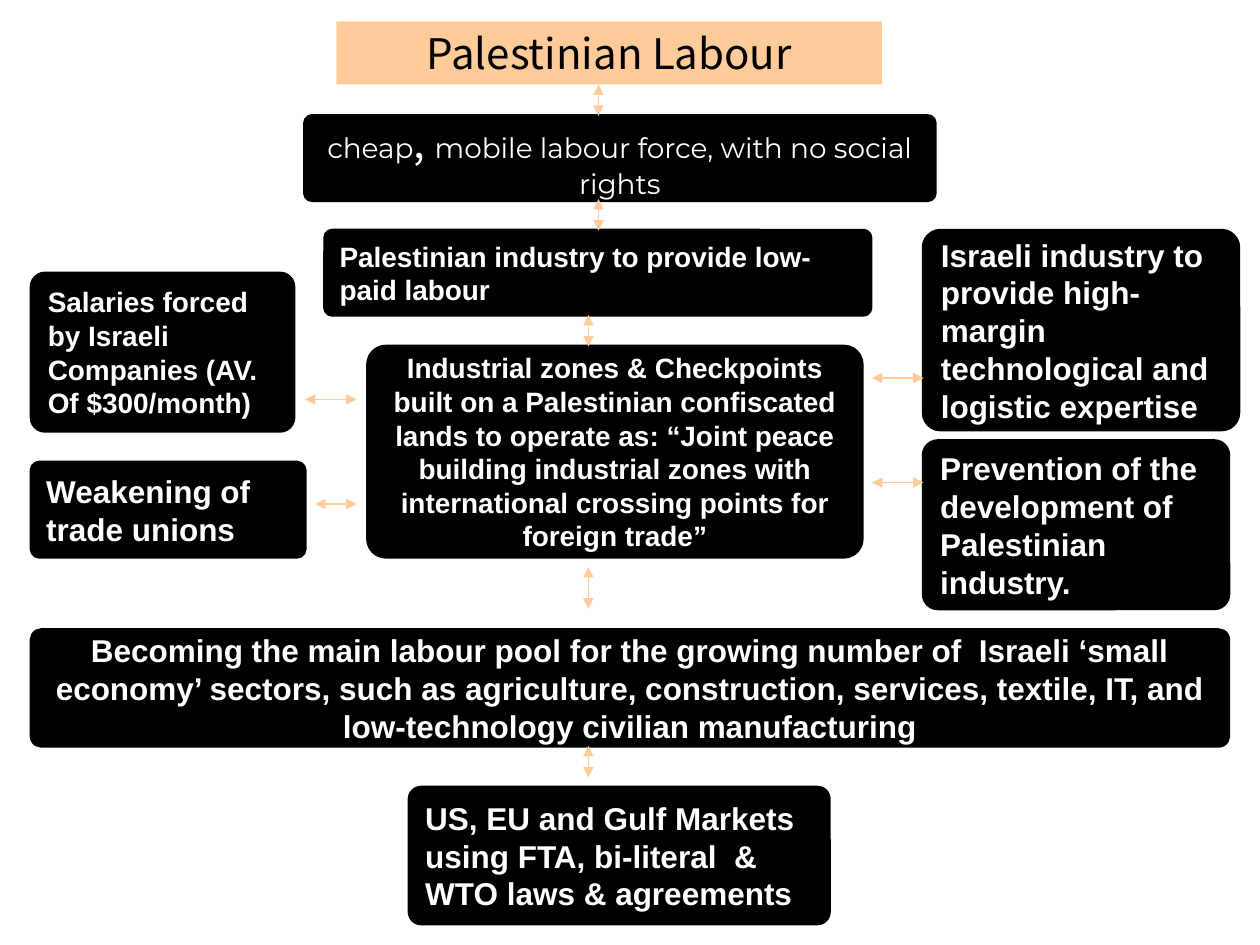
from dataclasses import dataclass
from typing import NamedTuple

from lxml.etree import SubElement
from pptx import Presentation
from pptx.dml.color import RGBColor
from pptx.enum.shapes import MSO_CONNECTOR, MSO_SHAPE
from pptx.enum.text import MSO_ANCHOR, MSO_AUTO_SIZE, PP_ALIGN
from pptx.oxml.ns import qn
from pptx.slide import Slide
from pptx.util import Inches, Pt

BLACK = RGBColor(0x00, 0x00, 0x00)
WHITE = RGBColor(0xFF, 0xFF, 0xFF)
PEACH = RGBColor(0xFF, 0xCC, 0x99)
TITLE_FONT = "Noto Sans CJK JP"


@dataclass
class Box:
    left: float
    top: float
    width: float
    height: float
    text: str
    size: int = 18
    align: PP_ALIGN = PP_ALIGN.LEFT
    font: str = "Arial"
    bold: bool = True


class Arrow(NamedTuple):
    x1: float
    y1: float
    x2: float
    y2: float


LABOUR_FORCE = Box(2.42, 0.92, 5, 0.67, "cheap", 16, PP_ALIGN.CENTER, "Montserrat", False)

BOXES = [
    # Right side
    Box(7.33, 1.83, 2.5, 1.58,
        "Israeli industry to provide high-margin technological and logistic expertise"),
    Box(7.33, 3.5, 2.42, 1.33, "Prevention of the development of Palestinian industry."),
    # Left side
    Box(0.25, 2.17, 2.08, 1.25,
        "Salaries forced by Israeli Companies (AV. Of $300/month)", 16),
    Box(0.25, 3.67, 2.17, 0.75, "Weakening of trade unions"),
    # Central column
    Box(2.58, 1.83, 4.33, 0.67, "Palestinian industry to provide low-paid labour", 16),
    Box(2.92, 2.75, 3.92, 1.67,
        "Industrial zones & Checkpoints built on a Palestinian confiscated lands "
        "to operate as: “Joint peace building industrial zones with international "
        "crossing points for foreign trade”", 16, PP_ALIGN.CENTER),
    Box(0.25, 5, 9.5, 0.92,
        "Becoming the main labour pool for the growing number of  Israeli ‘small "
        "economy’ sectors, such as agriculture, construction, services, textile, IT, "
        "and low-technology civilian manufacturing", 18, PP_ALIGN.CENTER),
    Box(3.25, 6.25, 3.33, 1.08,
        "US, EU and Gulf Markets using FTA, bi-literal  & WTO laws & agreements"),
]

ARROWS = [
    # Down the central column
    Arrow(4.75, 0.67, 4.75, 0.92),
    Arrow(4.75, 1.58, 4.75, 1.83),
    Arrow(4.67, 2.5, 4.67, 2.75),
    Arrow(4.67, 4.5, 4.67, 4.83),
    Arrow(4.67, 5.92, 4.67, 6.17),
    # Out to the sides
    Arrow(2.83, 3.17, 2.42, 3.17),
    Arrow(2.83, 4, 2.5, 4),
    Arrow(7.33, 3, 6.92, 3),
    Arrow(7.33, 3.83, 6.92, 3.83),
]


def add_title(slide: Slide, text: str) -> None:
    title = slide.shapes.title
    title.left, title.top = Inches(2.67), Inches(0.17)
    title.width, title.height = Inches(4.33), Inches(0.5)
    title.fill.solid()
    title.fill.fore_color.rgb = PEACH
    frame = title.text_frame
    frame.text = text
    frame.auto_size = MSO_AUTO_SIZE.NONE
    frame.vertical_anchor = MSO_ANCHOR.MIDDLE
    paragraph = frame.paragraphs[0]
    paragraph.alignment = PP_ALIGN.CENTER
    paragraph.font.name = TITLE_FONT
    paragraph.font.size = Pt(24)
    paragraph.font.color.rgb = BLACK


def add_box(slide: Slide, box: Box):
    """Draw a rounded black box and return its paragraph."""
    shape = slide.shapes.add_shape(
        MSO_SHAPE.ROUNDED_RECTANGLE, Inches(box.left), Inches(box.top),
        Inches(box.width), Inches(box.height))
    shape.adjustments[0] = 0.085
    shape.shadow.inherit = False
    shape.fill.solid()
    shape.fill.fore_color.rgb = BLACK
    shape.line.color.rgb = BLACK
    shape.line.width = Pt(2)
    frame = shape.text_frame
    frame.word_wrap = True
    frame.vertical_anchor = MSO_ANCHOR.MIDDLE
    paragraph = frame.paragraphs[0]
    paragraph.text = box.text
    paragraph.alignment = box.align
    paragraph.font.name = box.font
    paragraph.font.size = Pt(box.size)
    paragraph.font.bold = box.bold
    paragraph.font.color.rgb = WHITE
    return paragraph


def add_arrow(slide: Slide, arrow: Arrow) -> None:
    connector = slide.shapes.add_connector(
        MSO_CONNECTOR.STRAIGHT, *(Inches(value) for value in arrow))
    connector.line.color.rgb = PEACH
    connector.line.width = Pt(1)
    line = connector.line._get_or_add_ln()
    for end in ("a:headEnd", "a:tailEnd"):
        SubElement(line, qn(end), type="triangle")
    SubElement(connector._element.spPr, qn("a:effectLst"))


def main() -> None:
    presentation = Presentation()
    presentation.slide_width, presentation.slide_height = Inches(10), Inches(7.5)
    slide = presentation.slides.add_slide(presentation.slide_layouts[5])

    add_title(slide, "Palestinian Labour")

    # Labour force box, with a larger comma
    paragraph = add_box(slide, LABOUR_FORCE)
    comma = paragraph.add_run()
    comma.text = ", "
    comma.font.name = TITLE_FONT
    comma.font.size = Pt(24)
    paragraph.add_run().text = "mobile labour force, with no social rights"

    for box in BOXES:
        add_box(slide, box)
    for arrow in ARROWS:
        add_arrow(slide, arrow)

    presentation.save("out.pptx")


if __name__ == "__main__":
    main()
